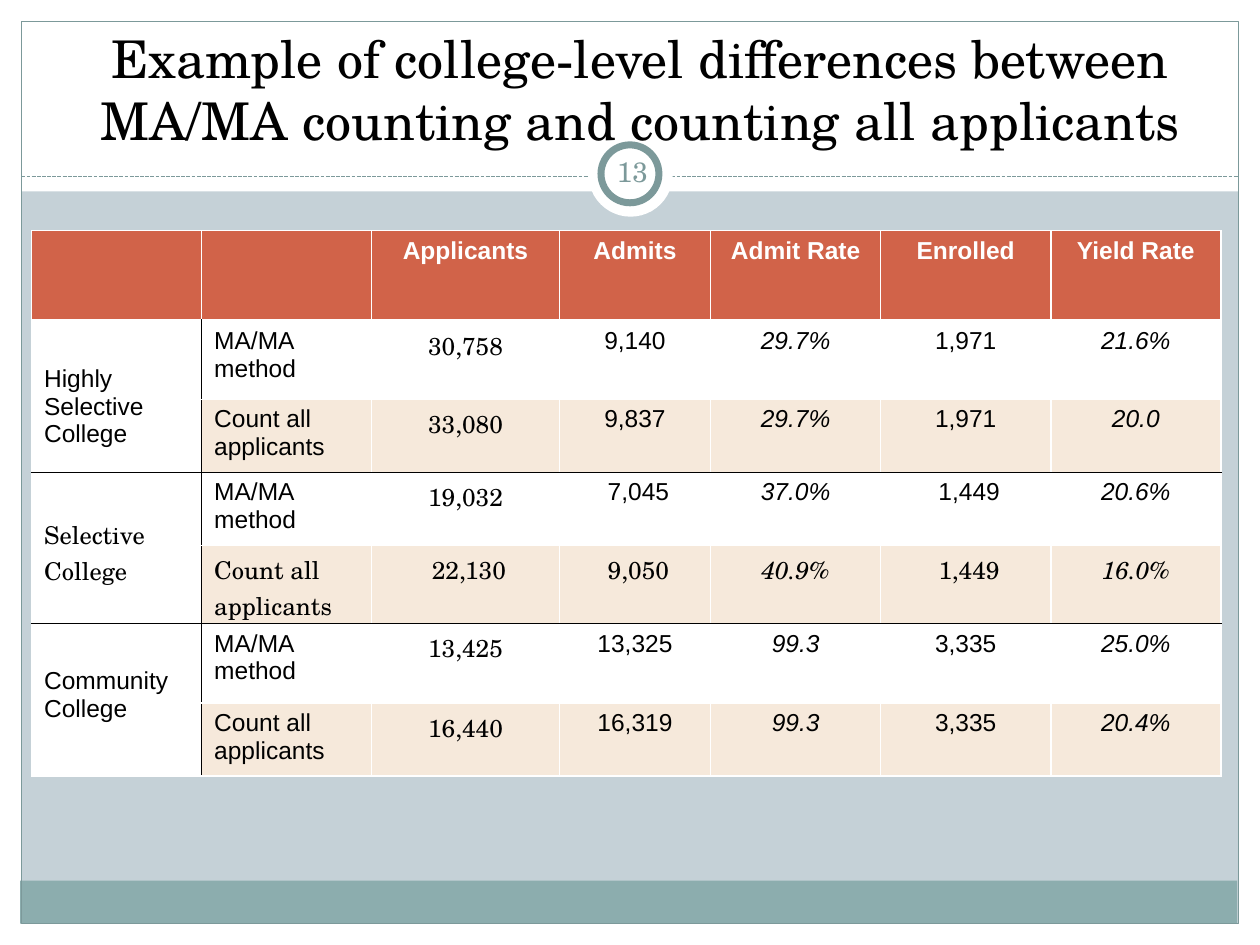
from dataclasses import dataclass

from lxml import etree
from pptx import Presentation
from pptx.dml.color import RGBColor
from pptx.enum.dml import MSO_LINE
from pptx.enum.shapes import MSO_CONNECTOR, MSO_SHAPE
from pptx.enum.text import MSO_ANCHOR, MSO_AUTO_SIZE, PP_ALIGN
from pptx.oxml.ns import qn
from pptx.slide import Slide
from pptx.table import Table, _Cell
from pptx.text.text import TextFrame
from pptx.util import Emu, Pt

PX = 9144  # 100 px to the inch

WHITE = RGBColor(0xFF, 0xFF, 0xFF)
BLACK = RGBColor(0x00, 0x00, 0x00)
BACKDROP = RGBColor(0xC5, 0xD1, 0xD7)
FOOTER = RGBColor(0x8C, 0xAD, 0xAE)
FRAME = RGBColor(0x7C, 0x99, 0x9A)
HEADER = RGBColor(0xD1, 0x63, 0x49)
CREAM = RGBColor(0xF6, 0xE9, 0xDB)

SERIF = "TeX Gyre Schola"
SANS = "Arial"

COLUMN_WIDTHS = (135, 135, 149, 120, 135, 135, 135)
ROW_HEIGHTS = (72, 62, 58, 58, 62, 63, 58)
HEADINGS = ("", "", "Applicants", "Admits", "Admit Rate", "Enrolled", "Yield Rate")
METHODS = ("MA/MA\nmethod", "Count all applicants")
APPLICANTS_COLUMN = 2
RATE_COLUMNS = (4, 6)
SERIF_ROW = 4
COLLEGE_TOP_MARGIN = 35


@dataclass(frozen=True)
class Panel:
    left: int
    top: int
    width: int
    height: int
    fill: RGBColor | None = None
    line: RGBColor | None = None
    weight: float = 0.75
    preset: MSO_SHAPE = MSO_SHAPE.RECTANGLE


@dataclass(frozen=True)
class College:
    name: str
    by_method: tuple[tuple[str, ...], tuple[str, ...]]
    font: str = SANS


PANELS = (
    Panel(0, 733, 1000, 17, WHITE),
    Panel(0, 0, 1000, 152, WHITE),
    Panel(0, 0, 17, 750, WHITE),
    Panel(983, 0, 17, 750, WHITE),
    Panel(16, 699, 966, 34, FOOTER),
    Panel(17, 17, 966, 716, line=FRAME),
)
BADGE = (
    Panel(467, 105, 67, 67, WHITE, preset=MSO_SHAPE.OVAL),
    Panel(477, 115, 46, 46, WHITE, FRAME, 4, MSO_SHAPE.OVAL),
)
COLLEGES = (
    College("Highly Selective College", (
        ("30,758", "9,140", "29.7%", "1,971", "21.6%"),
        ("33,080", "9,837", "29.7%", "1,971", "20.0"),
    )),
    College("Selective College", (
        ("19,032", " 7,045", "37.0%", " 1,449", "20.6%"),
        (" 22,130", " 9,050", "40.9%", " 1,449", "16.0%"),
    ), SERIF),
    College("Community College", (
        ("13,425", "13,325", "99.3", "3,335", "25.0%"),
        ("16,440", "16,319", "99.3", "3,335", "20.4%"),
    )),
)


def px(*lengths: int) -> tuple[Emu, ...]:
    return tuple(Emu(length * PX) for length in lengths)


def draw_panel(slide: Slide, panel: Panel) -> None:
    shape = slide.shapes.add_shape(
        panel.preset, *px(panel.left, panel.top, panel.width, panel.height))
    shape.shadow.inherit = False
    if panel.fill is None:
        shape.fill.background()
    else:
        shape.fill.solid()
        shape.fill.fore_color.rgb = panel.fill
    if panel.line is None:
        shape.line.fill.background()
    else:
        shape.line.color.rgb = panel.line
        shape.line.width = Pt(panel.weight)


def draw_divider(slide: Slide) -> None:
    divider = slide.shapes.add_connector(MSO_CONNECTOR.STRAIGHT, *px(17, 140, 983, 140))
    divider.line.color.rgb = FRAME
    divider.line.width = Pt(0.75)
    divider.line.dash_style = MSO_LINE.SQUARE_DOT
    etree.SubElement(divider._element.spPr, qn("a:effectLst"))


def write(frame: TextFrame, text: str, size: float, color: RGBColor, font: str,
          align: PP_ALIGN = PP_ALIGN.CENTER, bold: bool = False,
          italic: bool = False) -> None:
    frame.text = text
    for paragraph in frame.paragraphs:
        paragraph.alignment = align
        paragraph.font.size = Pt(size)
        paragraph.font.name = font
        paragraph.font.color.rgb = color
        paragraph.font.bold = bold
        paragraph.font.italic = italic


def place_title(slide: Slide) -> None:
    title = slide.shapes.title
    title.left, title.top, title.width, title.height = px(42, 42, 933, 83)
    frame = title.text_frame
    frame.word_wrap = True
    frame.auto_size = MSO_AUTO_SIZE.NONE
    frame.vertical_anchor = MSO_ANCHOR.BOTTOM
    write(frame, "Example of college-level differences between "
          "MA/MA counting and counting all applicants", 29.7, BLACK, SERIF)
    slide.shapes._spTree.append(title._element)  # in front of the white bands


def place_page_number(slide: Slide) -> None:
    frame = slide.shapes.add_textbox(*px(477, 112, 50, 48)).text_frame
    frame.word_wrap = True
    frame.vertical_anchor = MSO_ANCHOR.MIDDLE
    frame.margin_left, frame.margin_right, frame.margin_top, frame.margin_bottom = px(5, 5, 5, 5)
    write(frame, "13", 16, FRAME, SERIF)


def rule_cell(cell: _Cell, row: int, column: int) -> None:
    """Black rules divide the colleges and follow their names; the rest are white."""
    body = row > 0
    starts_college = row in (3, 5)
    ends_college = row in (2, 4) or (column == 0 and row in (1, 3))
    sides = {
        "a:lnL": body and column == 1,
        "a:lnR": body and column == 0,
        "a:lnT": starts_college and not (column == 0 and row % 2 == 0),
        "a:lnB": ends_college,
    }
    properties = cell._tc.get_or_add_tcPr()
    for tag, is_black in sides.items():
        points = 3 if tag == "a:lnB" and not body else 1
        line = etree.SubElement(properties, qn(tag), w=str(Pt(points)))
        fill = etree.SubElement(line, qn("a:solidFill"))
        etree.SubElement(fill, qn("a:srgbClr"), val=str(BLACK if is_black else WHITE))


def paint_cells(table: Table) -> None:
    for row in range(len(ROW_HEIGHTS)):
        for column in range(len(COLUMN_WIDTHS)):
            cell = table.cell(row, column)
            rule_cell(cell, row, column)
            cell.fill.solid()
            shaded = row % 2 == 0 and column > 0
            cell.fill.fore_color.rgb = HEADER if row == 0 else CREAM if shaded else WHITE


def fill_college(table: Table, first_row: int, college: College) -> None:
    name_cell = table.cell(first_row, 0)
    name_cell.merge(table.cell(first_row + 1, 0))
    name_cell.margin_top = Emu(COLLEGE_TOP_MARGIN * PX)
    write(name_cell.text_frame, college.name, 14, BLACK, college.font, PP_ALIGN.LEFT)
    for row, (method, figures) in enumerate(zip(METHODS, college.by_method), first_row):
        for column, text in enumerate((method, *figures), 1):
            is_serif = column == APPLICANTS_COLUMN or row == SERIF_ROW
            write(table.cell(row, column).text_frame, text, 14, BLACK,
                  SERIF if is_serif else SANS,
                  PP_ALIGN.LEFT if column == 1 else PP_ALIGN.CENTER,
                  italic=column in RATE_COLUMNS)


def draw_table(slide: Slide) -> None:
    table = slide.shapes.add_table(
        len(ROW_HEIGHTS), len(COLUMN_WIDTHS),
        *px(25, 183, sum(COLUMN_WIDTHS), sum(ROW_HEIGHTS))).table
    table.horz_banding = False
    for column, width in zip(table.columns, px(*COLUMN_WIDTHS)):
        column.width = width
    for row, height in zip(table.rows, px(*ROW_HEIGHTS)):
        row.height = height
    paint_cells(table)
    for column, heading in enumerate(HEADINGS):
        if heading:
            write(table.cell(0, column).text_frame, heading, 14, WHITE, SANS, bold=True)
    for index, college in enumerate(COLLEGES):
        fill_college(table, 1 + 2 * index, college)


def main() -> None:
    deck = Presentation()
    deck.slide_width, deck.slide_height = px(1000, 750)
    slide = deck.slides.add_slide(deck.slide_layouts[5])
    slide.background.fill.solid()
    slide.background.fill.fore_color.rgb = BACKDROP
    for panel in PANELS:
        draw_panel(slide, panel)
    draw_divider(slide)
    for circle in BADGE:
        draw_panel(slide, circle)
    place_title(slide)
    place_page_number(slide)
    draw_table(slide)
    deck.save("out.pptx")


if __name__ == "__main__":
    main()
